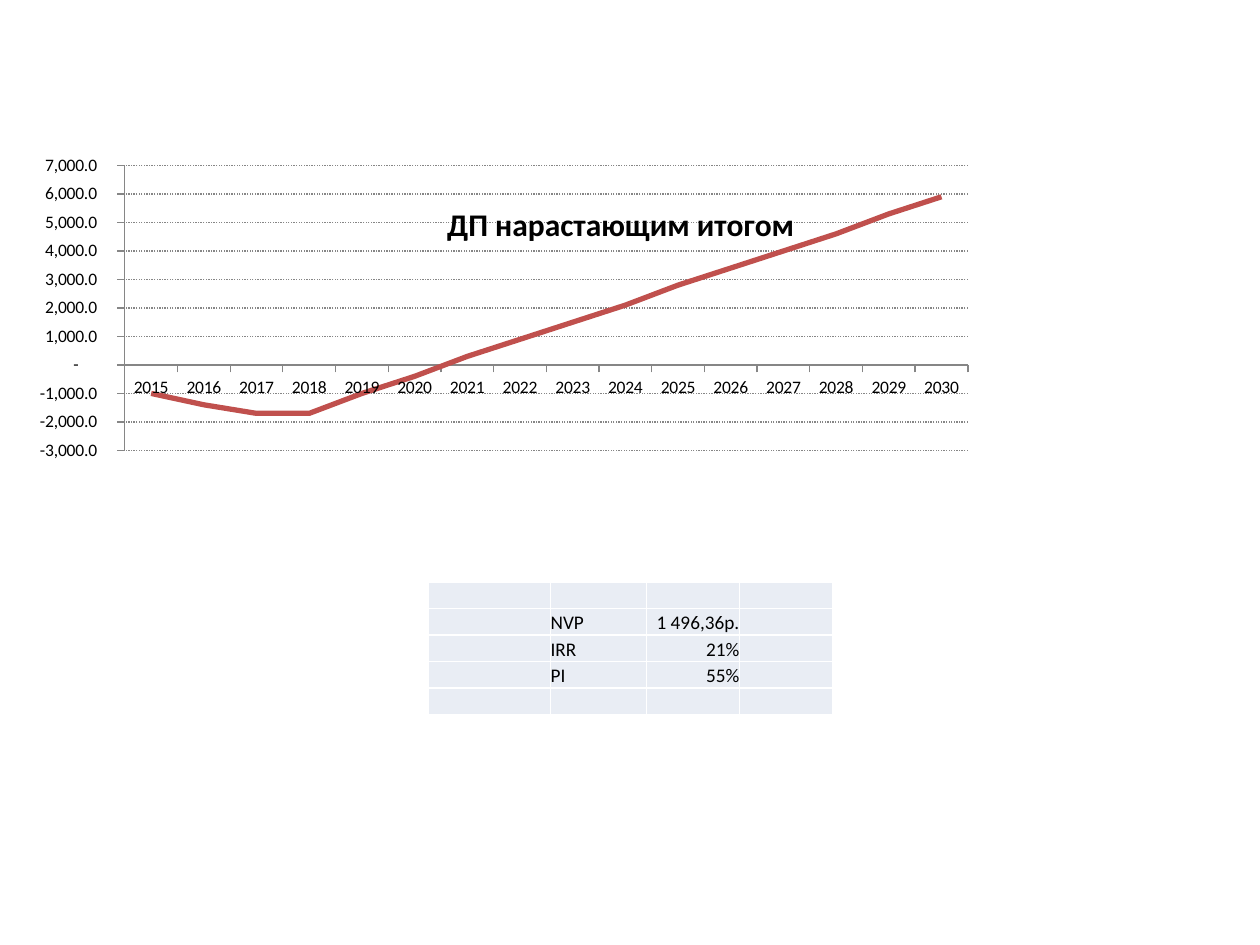
from lxml import etree
from pptx import Presentation
from pptx import util as u
from pptx.chart import data as cd
from pptx.dml import color
from pptx.enum import chart as ch, dml, text
from pptx.oxml import ns

FONT = "Calibri"
COLORS = {
    "text": "000000",
    "line": "C0504D",
    "axis": "868686",
    "cell": "E9EDF4",
    "border": "FFFFFF",
}
YEARS = [str(y) for y in range(2015, 2031)]
CASH_FLOW = [-1000, -1400, -1700, -1700, -1000, -400, 300, 900,
             1500, 2100, 2800, 3400, 4000, 4600, 5300, 5900]
TITLE = "ДП нарастающим итогом"
NUMBER_FORMAT = (r'_-* #,##0.0_р_._-;\-* #,##0.0_р_._-;'
                 r'_-* "-"??_р_._-;_-@_-')
COLUMNS = [0.97, 0.76, 0.74, 0.74]
ROW_HEIGHT = 0.21
INDICATORS = [("NVP", "1 496,36р."), ("IRR", "21%"), ("PI", "55%")]


def rgb(name):
    return color.RGBColor.from_string(COLORS[name])


def style_font(font, size, bold=False):
    font.name = FONT
    font.size = u.Pt(size)
    font.bold = bold
    font.color.rgb = rgb("text")


def style_line(line, name, width, dash=None):
    line.color.rgb = rgb(name)
    line.width = u.Pt(width)
    if dash is not None:
        line.dash_style = dash


def set_layout(parent, index, inner=False, **fractions):
    """Place a chart part by fractions of the chart frame."""
    for old in parent.findall(ns.qn("c:layout")):
        parent.remove(old)
    layout = etree.Element(ns.qn("c:layout"))
    manual = etree.SubElement(layout, ns.qn("c:manualLayout"))
    settings = {"layoutTarget": "inner"} if inner else {}
    settings.update(xMode="edge", yMode="edge", **fractions)
    for tag, value in settings.items():
        etree.SubElement(manual, ns.qn(f"c:{tag}")).set("val", str(value))
    parent.insert(index, layout)


def add_cash_flow_chart(slide):
    data = cd.CategoryChartData()
    data.categories = YEARS
    data.add_series(TITLE, CASH_FLOW)
    frame = slide.shapes.add_chart(
        ch.XL_CHART_TYPE.LINE, u.Inches(-2.24), u.Inches(1.23),
        u.Inches(14.36), u.Inches(3), data)
    chart = frame.chart
    style_font(chart.font, 10)
    chart.has_legend = False

    # Title laid over the plot
    chart.has_title = True
    tf = chart.chart_title.text_frame
    r = tf.paragraphs[0].add_run()
    r.text = TITLE
    style_font(r.font, 18, bold=True)
    title = chart.chart_title._element
    title.get_or_add_tx()
    set_layout(title, 1, x=0.4, y=0.11)
    title.find(ns.qn("c:overlay")).set("val", "1")

    # Plot and series
    plot_area = chart._chartSpace.chart.plotArea
    set_layout(plot_area, 0, inner=True, x=0.225, y=0.028, w=0.466, h=0.754)
    plot = chart.plots[0]
    plot.vary_by_categories = False
    series = plot.series[0]
    series.smooth = False
    series.marker.style = ch.XL_MARKER_STYLE.NONE
    style_line(series.format.line, "line", 3)

    # Axes
    for axis in (chart.category_axis, chart.value_axis):
        axis.major_tick_mark = ch.XL_TICK_MARK.OUTSIDE
        axis.minor_tick_mark = ch.XL_TICK_MARK.NONE
        style_line(axis.format.line, "axis", 0.75)
        style_font(axis.tick_labels.font, 10)
    value_axis = chart.value_axis
    value_axis.minimum_scale = -3000
    value_axis.maximum_scale = 7000
    value_axis.major_unit = 1000
    value_axis.tick_labels.number_format = NUMBER_FORMAT
    value_axis.tick_labels.number_format_is_linked = False
    value_axis.has_major_gridlines = True
    style_line(value_axis.major_gridlines.format.line, "axis", 0.75,
               dml.MSO_LINE.ROUND_DOT)


def set_borders(cell):
    tc_pr = cell._tc.get_or_add_tcPr()
    for index, side in enumerate(("lnL", "lnR", "lnT", "lnB")):
        ln = etree.Element(ns.qn(f"a:{side}"), w=str(u.Pt(1)))
        fill = etree.SubElement(ln, ns.qn("a:solidFill"))
        etree.SubElement(fill, ns.qn("a:srgbClr"), val=COLORS["border"])
        tc_pr.insert(index, ln)


def fill_cell(cell, value, align):
    cell.margin_left = cell.margin_right = 0
    cell.margin_top = cell.margin_bottom = 0
    cell.vertical_anchor = text.MSO_ANCHOR.BOTTOM
    cell.fill.solid()
    cell.fill.fore_color.rgb = rgb("cell")
    set_borders(cell)
    p = cell.text_frame.paragraphs[0]
    p.alignment = align
    if value:
        r = p.add_run()
        r.text = value
        style_font(r.font, 11)
    else:
        # Keeps empty rows from growing
        etree.SubElement(p._p, ns.qn("a:endParaRPr"), sz="1100")


def add_indicator_table(slide):
    rows = [("", "")] + INDICATORS + [("", "")]
    frame = slide.shapes.add_table(
        len(rows), len(COLUMNS), u.Inches(3.4), u.Inches(4.62),
        u.Inches(sum(COLUMNS)), u.Inches(ROW_HEIGHT * len(rows)))
    table = frame.table
    table.first_row = table.horz_banding = False
    for column, width in zip(table.columns, COLUMNS):
        column.width = u.Inches(width)
    for i, (name, value) in enumerate(rows):
        table.rows[i].height = u.Inches(ROW_HEIGHT)
        for j, content in enumerate(("", name, value, "")):
            align = text.PP_ALIGN.RIGHT if j == 2 else text.PP_ALIGN.LEFT
            fill_cell(table.cell(i, j), content, align)


def main():
    prs = Presentation()
    prs.slide_width, prs.slide_height = u.Inches(10), u.Inches(7.5)
    slide = prs.slides.add_slide(prs.slide_layouts[6])
    add_cash_flow_chart(slide)
    add_indicator_table(slide)
    prs.save("out.pptx")


if __name__ == "__main__":
    main()
